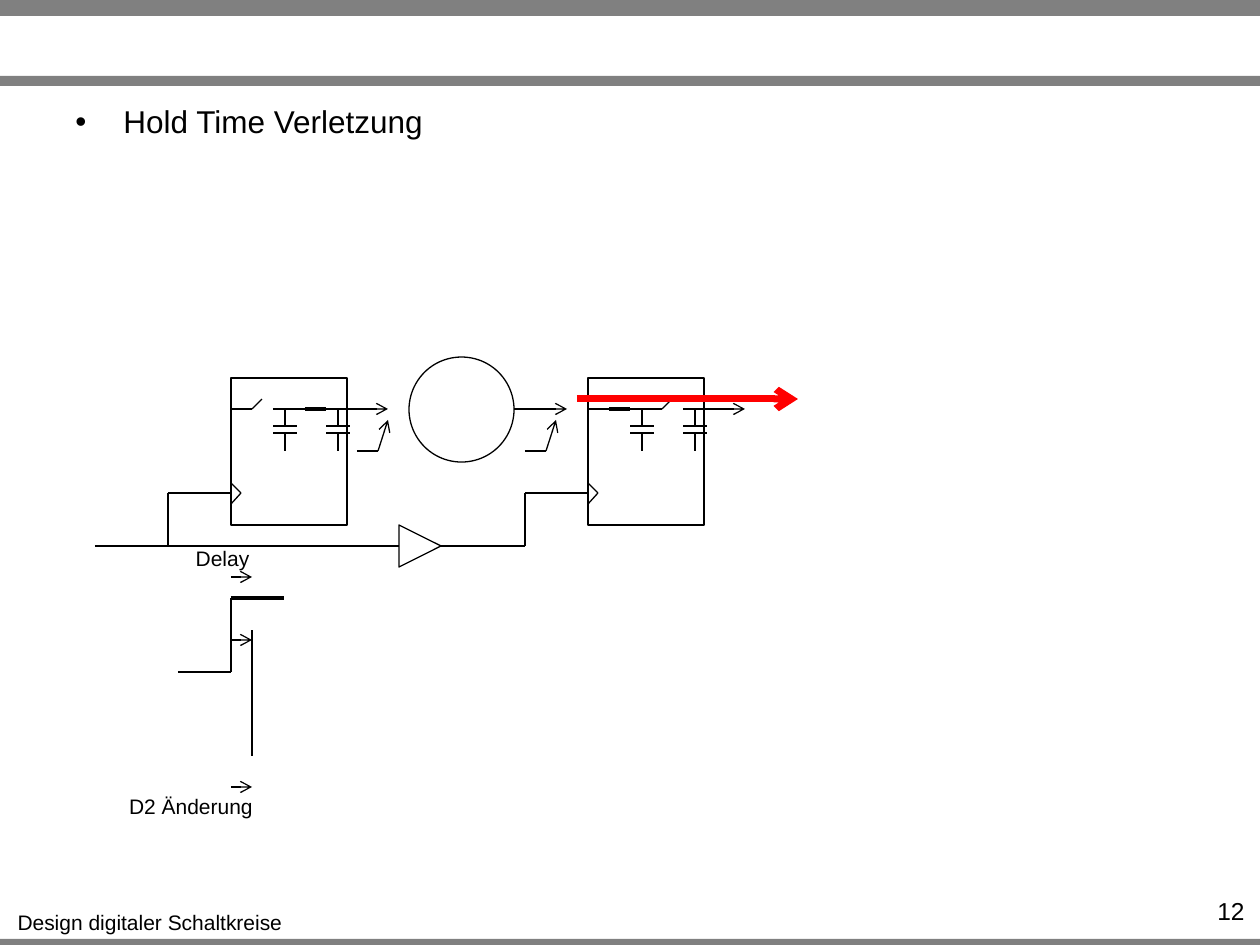
from lxml import etree
from pptx import Presentation
from pptx import util as u
from pptx.dml.color import RGBColor
from pptx.enum import shapes, text
from pptx.oxml.ns import qn

COLORS = {"ink": "000000", "bar": "808080", "path": "FF0000"}
PX = u.Inches(1) / 126
THIN, BOLD, HEAVY = 0.75, 2, 4
FONT = "Arial"


def px(length):
    """Turn whole px into EMU."""
    return u.Emu(round(length * PX))


def color(name):
    """Look up a colour by its role."""
    return RGBColor.from_string(COLORS[name])


def wire(parts, origin, start, end, weight=THIN, arrow=False, ink="ink"):
    """Draw a straight line between two points given from the origin."""
    left, top = origin
    line = parts.add_connector(
        shapes.MSO_CONNECTOR.STRAIGHT,
        px(left + start[0]), px(top + start[1]), px(left + end[0]), px(top + end[1]))
    line.line.color.rgb = color(ink)
    line.line.width = u.Pt(weight)
    if arrow:
        etree.SubElement(line.line._get_or_add_ln(), qn("a:tailEnd"), type="arrow")
    etree.SubElement(line._element.spPr, qn("a:effectLst"))
    return line


def polyline(parts, origin, points, arrow=False):
    """Chain thin wires through points, with an optional arrow on the last."""
    last = len(points) - 2
    for i, (start, end) in enumerate(zip(points, points[1:])):
        wire(parts, origin, start, end, arrow=arrow and i == last)


def outline(parts, kind, box):
    """Draw an unfilled symbol with a thin outline."""
    symbol = parts.add_shape(kind, *map(px, box))
    symbol.shadow.inherit = False
    symbol.fill.background()
    symbol.line.color.rgb = color("ink")
    symbol.line.width = u.Pt(THIN)
    return symbol


def bar(parts, box):
    """Draw one grey band across the slide."""
    band = parts.add_shape(shapes.MSO_SHAPE.RECTANGLE, *map(px, box))
    band.shadow.inherit = False
    band.fill.solid()
    band.fill.fore_color.rgb = color("bar")
    band.line.fill.background()


def label(parts, box, words, size, align, wrap=False):
    """Write one line of text and return its paragraph."""
    frame = parts.add_textbox(*map(px, box)).text_frame
    frame.word_wrap = wrap
    paragraph = frame.paragraphs[0]
    paragraph.alignment = align
    run = paragraph.add_run()
    run.text = words
    run.font.name = FONT
    run.font.size = u.Pt(size)
    run.font.color.rgb = color("ink")
    return paragraph


def heading(parts, box):
    """Write the bulleted topic."""
    topic = label(parts, box, "Hold Time Verletzung", 18, text.PP_ALIGN.LEFT, wrap=True)
    props = topic._p.get_or_add_pPr()
    props.set("marL", str(px(48)))
    props.set("indent", str(-px(48)))
    etree.SubElement(props, qn("a:buFont"), typeface=FONT)
    etree.SubElement(props, qn("a:buChar"), char="•")


def frame_bands(parts, box):
    """Place the grey bands, the footer and the page number."""
    left, top, width, height = box
    for y, thick in ((height - 6, 10), (0, 16), (76, 10)):
        bar(parts, (left, top + y, width, thick))
    label(parts, (left + 4, top + height - 42, 292, 38),
          "Design digitaler Schaltkreise", 12, text.PP_ALIGN.CENTER)
    label(parts, (left + width - 113, top + height - 55, 110, 30),
          "12", 14, text.PP_ALIGN.RIGHT, wrap=True)


def capacitor(parts, origin):
    """Draw a grouped capacitor hanging from its top left corner."""
    group = parts.add_group_shape().shapes
    for start, end in (((12, 0), (12, 17)), ((24, 17), (0, 17)),
                       ((24, 24), (0, 24)), ((12, 24), (12, 42))):
        wire(group, origin, start, end)


def flip_flop(parts, box, first_open):
    """Draw a register with one open and one closed switch."""
    origin = box[:2]
    outline(parts, shapes.MSO_SHAPE.RECTANGLE, box)
    polyline(parts, origin, [(0, 105), (10, 115), (0, 126)])
    wire(parts, origin, (0, 31), (21, 31))
    wire(parts, origin, (42, 31), (74, 31))
    wire(parts, origin, (95, 31), (105, 31))
    opened, closed = (21, 74) if first_open else (74, 21)
    wire(parts, origin, (opened, 31), (opened + 10, 21))
    wire(parts, origin, (closed, 31), (closed + 21, 31), BOLD)
    wire(parts, origin, (105, 31), (157, 31), arrow=True)
    for x in (42, 95):
        capacitor(parts, (origin[0] + x, origin[1] + 31))


def pointer(parts, origin):
    """Draw a bent arrow that points up at a signal."""
    polyline(parts, origin, [(0, 31), (21, 31), (31, 0)], arrow=True)


def circuit(parts, box):
    """Draw two registers, the logic between them and the clock line."""
    left, top, width, height = box
    origin = (left, top)
    for x, first_open in ((136, True), (493, False)):
        flip_flop(parts, (left + x, top + 21, 116, 147), first_open)
    outline(parts, shapes.MSO_SHAPE.OVAL, (left + 314, top, 105, 105))
    wire(parts, origin, (419, 52), (472, 52), arrow=True)
    for x in (262, 430):
        pointer(parts, (left + x, top + 63))
    buffer = outline(parts, shapes.MSO_SHAPE.ISOSCELES_TRIANGLE,
                     (left + 304, top + height - 42, 42, 42))
    buffer.rotation = 90
    clock = height - 21
    wire(parts, origin, (0, clock), (304, clock))
    polyline(parts, origin, [(73, clock), (73, 136), (136, 136)])
    polyline(parts, origin, [(346, clock), (430, clock), (430, 136), (493, 136)])
    wire(parts, origin, (482, 42), (width, 42), HEAVY, arrow=True, ink="path")


def timing(parts, box):
    """Draw the clock edge, its delay and the change of D2."""
    left, top, width, height = box
    origin = (left, top)
    edge, changed = 115, 136
    polyline(parts, origin, [(62, 133), (edge, 133), (edge, 59)])
    wire(parts, origin, (edge, 59), (width, 59), BOLD)
    wire(parts, origin, (changed, 91), (changed, 217))
    for y in (38, 101, 248):
        wire(parts, origin, (edge, y), (changed, y), arrow=True)
    label(parts, (left + 67, top, 79, 38), "Delay", 12, text.PP_ALIGN.CENTER)
    label(parts, (left, top + height - 38, 150, 38),
          "D2 Änderung", 12, text.PP_ALIGN.CENTER)


def main():
    """Build and save the slide."""
    deck = Presentation()
    deck.slide_width, deck.slide_height = px(1260), px(945)
    parts = deck.slides.add_slide(deck.slide_layouts[6]).shapes
    frame_bands(parts, (0, 0, 1260, 945))
    heading(parts, (63, 96, 1134, 156))
    circuit(parts, (95, 357, 703, 210))
    timing(parts, (116, 539, 168, 286))
    deck.save("out.pptx")


if __name__ == "__main__":
    main()
